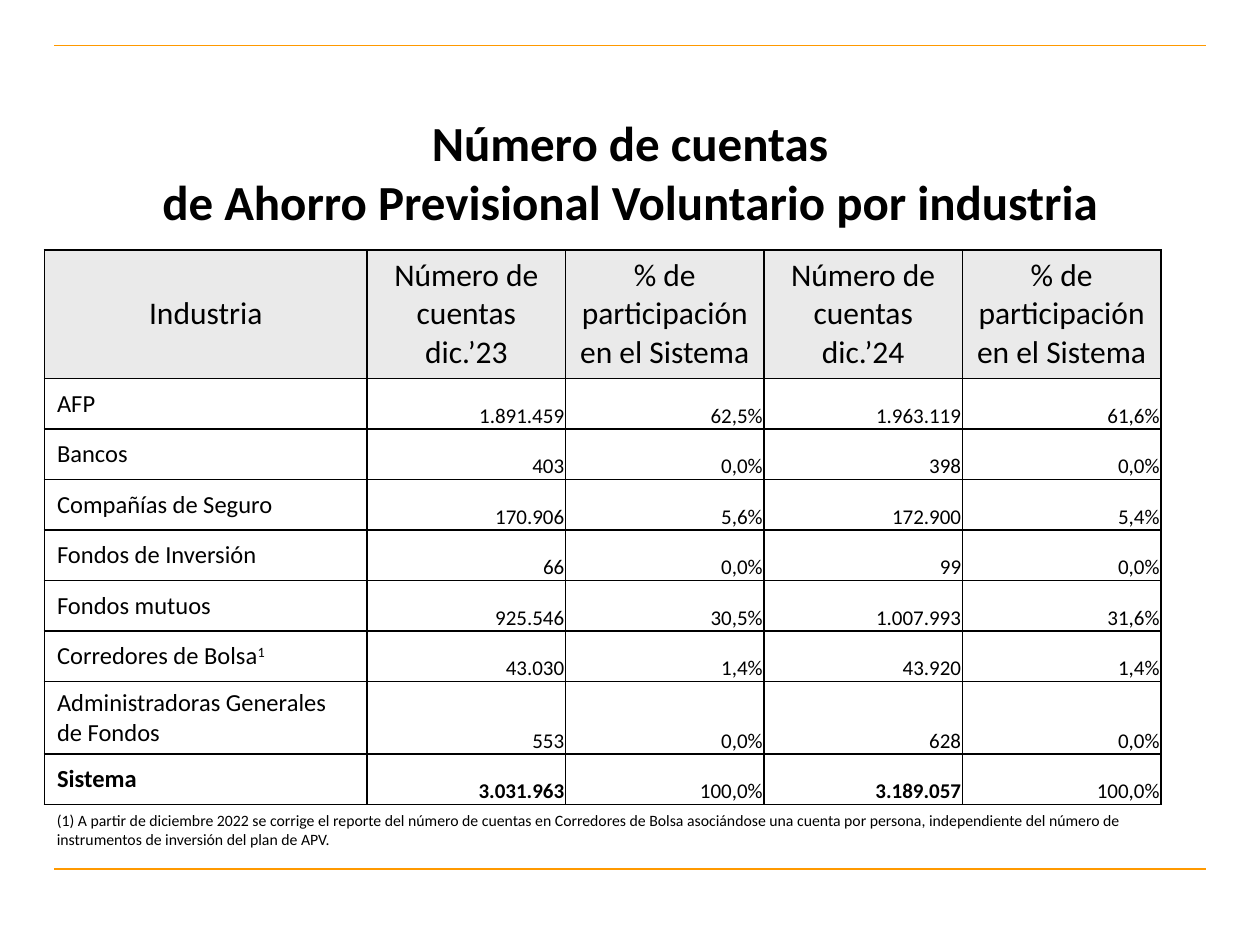
from lxml import etree
from pptx import Presentation
from pptx.dml.color import RGBColor
from pptx.enum import shapes, text
from pptx.oxml import ns
from pptx.util import Pt

LEFT, CENTER, RIGHT = text.PP_ALIGN.LEFT, text.PP_ALIGN.CENTER, text.PP_ALIGN.RIGHT
MIDDLE, BOTTOM = text.MSO_ANCHOR.MIDDLE, text.MSO_ANCHOR.BOTTOM
SHARE = "% de participación en el Sistema"
HEADS = ["Industria", "Número de cuentas\ndic.’23", SHARE,
         "Número de cuentas\ndic.’24", SHARE]
ROWS = [
    ["AFP", "1.891.459", "62,5%", "1.963.119", "61,6%"],
    ["Bancos", "403", "0,0%", "398", "0,0%"],
    ["Compañías de Seguro", "170.906", "5,6%", "172.900", "5,4%"],
    ["Fondos de Inversión", "66", "0,0%", "99", "0,0%"],
    ["Fondos mutuos", "925.546", "30,5%", "1.007.993", "31,6%"],
    ["Corredores de Bolsa^1", "43.030", "1,4%", "43.920", "1,4%"],
    ["Administradoras Generales de Fondos", "553", "0,0%", "628", "0,0%"],
    ["Sistema", "3.031.963", "100,0%", "3.189.057", "100,0%"],
]
NOTE = ("(1) A partir de diciembre 2022 se corrige el reporte del número de cuentas "
        "en Corredores de Bolsa asociándose una cuenta por persona, independiente "
        "del número de instrumentos de inversión del plan de APV.")


def color(code):
    return RGBColor.from_string(code)


class Deck:
    """Holds the style and the current slide."""
    face, ink, rule, head, body = "Calibri", "000000", "FF9900", "EAEAEA", "FFFFFF"

    def __init__(self, show):
        self.slide = show.slides.add_slide(show.slide_layouts[5])

    def style(self, frame, size, align, bold=False):
        for para in frame.paragraphs:
            para.alignment = align
            font = para.font
            font.name, font.size, font.bold = self.face, Pt(size), bold
            font.color.rgb = color(self.ink)

    def line(self, y):
        line = self.slide.shapes.add_connector(
            shapes.MSO_CONNECTOR.STRAIGHT, Pt(31), Pt(y), Pt(689), Pt(y))
        line.line.color.rgb = color(self.rule)
        line.line.width = Pt(0.75)
        etree.SubElement(line._element.spPr, ns.qn("a:effectLst"))

    def title(self, words, box):
        shape = self.slide.shapes.title
        shape.left, shape.top, shape.width, shape.height = map(Pt, box)
        frame = shape.text_frame
        frame.text = words
        frame.auto_size = text.MSO_AUTO_SIZE.NONE
        frame.vertical_anchor = MIDDLE
        frame.margin_top, frame.margin_bottom = 0, Pt(5)
        self.style(frame, 28, CENTER, True)

    def note(self, words, box):
        frame = self.slide.shapes.add_textbox(*map(Pt, box)).text_frame
        frame.word_wrap = True
        frame.auto_size = text.MSO_AUTO_SIZE.SHAPE_TO_FIT_TEXT
        frame.text = words
        self.style(frame, 9, LEFT)

    def cell(self, cell, words, fill, size, align, anchor, bold, pads):
        base, _, mark = words.partition("^")
        cell.text = base
        if mark:
            run = cell.text_frame.paragraphs[0].add_run()
            run.text = mark
            run._r.get_or_add_rPr().set("baseline", "30000")
        self.style(cell.text_frame, size, align, bold)
        cell.vertical_anchor = anchor
        cell.margin_left, cell.margin_top, cell.margin_right, cell.margin_bottom = map(Pt, pads)
        props = cell._tc.get_or_add_tcPr()
        for side in ("lnL", "lnR", "lnT", "lnB"):
            edge = etree.SubElement(props, ns.qn("a:" + side), w=str(Pt(1)))
            paint = etree.SubElement(edge, ns.qn("a:solidFill"))
            etree.SubElement(paint, ns.qn("a:srgbClr"), val=self.ink)
        cell.fill.solid()
        cell.fill.fore_color.rgb = color(fill)

    def table(self, box, widths, heights):
        grid = self.slide.shapes.add_table(
            len(heights), len(widths), *map(Pt, box)).table
        grid.first_row = grid.horz_banding = False
        for col, width in zip(grid.columns, widths):
            col.width = Pt(width)
        for row, height in zip(grid.rows, heights):
            row.height = Pt(height)
        wide, tight = (7.2, 3.6, 7.2, 3.6), (0.75, 0.75, 0.75, 0)
        for c, words in enumerate(HEADS):
            self.cell(grid.cell(0, c), words, self.head, 18, CENTER, MIDDLE, False, wide)
        for r, row in enumerate(ROWS, 1):
            total = row[0] == "Sistema"
            for c, words in enumerate(row):
                look = (RIGHT, BOTTOM) if c else (LEFT, MIDDLE)
                bold = total and not words.endswith("%")
                self.cell(grid.cell(r, c), words, self.body, 12 if c else 14,
                          *look, bold, tight if c else wide)


def main():
    show = Presentation()
    show.slide_width, show.slide_height = Pt(720), Pt(540)
    deck = Deck(show)
    for y in (26, 496.6):
        deck.line(y)
    deck.title("Número de cuentas\vde Ahorro Previsional Voluntario por industria",
               (36, 64, 648, 73))
    heights = [73.4] + [28.9] * 6 + [38.2, 28.9]
    deck.table((25.4, 142.8, 638, 317), [184.4] + [113.4] * 4, heights)
    deck.note(NOTE, (25.4, 460, 638, 29))
    show.save("out.pptx")


if __name__ == "__main__":
    main()
